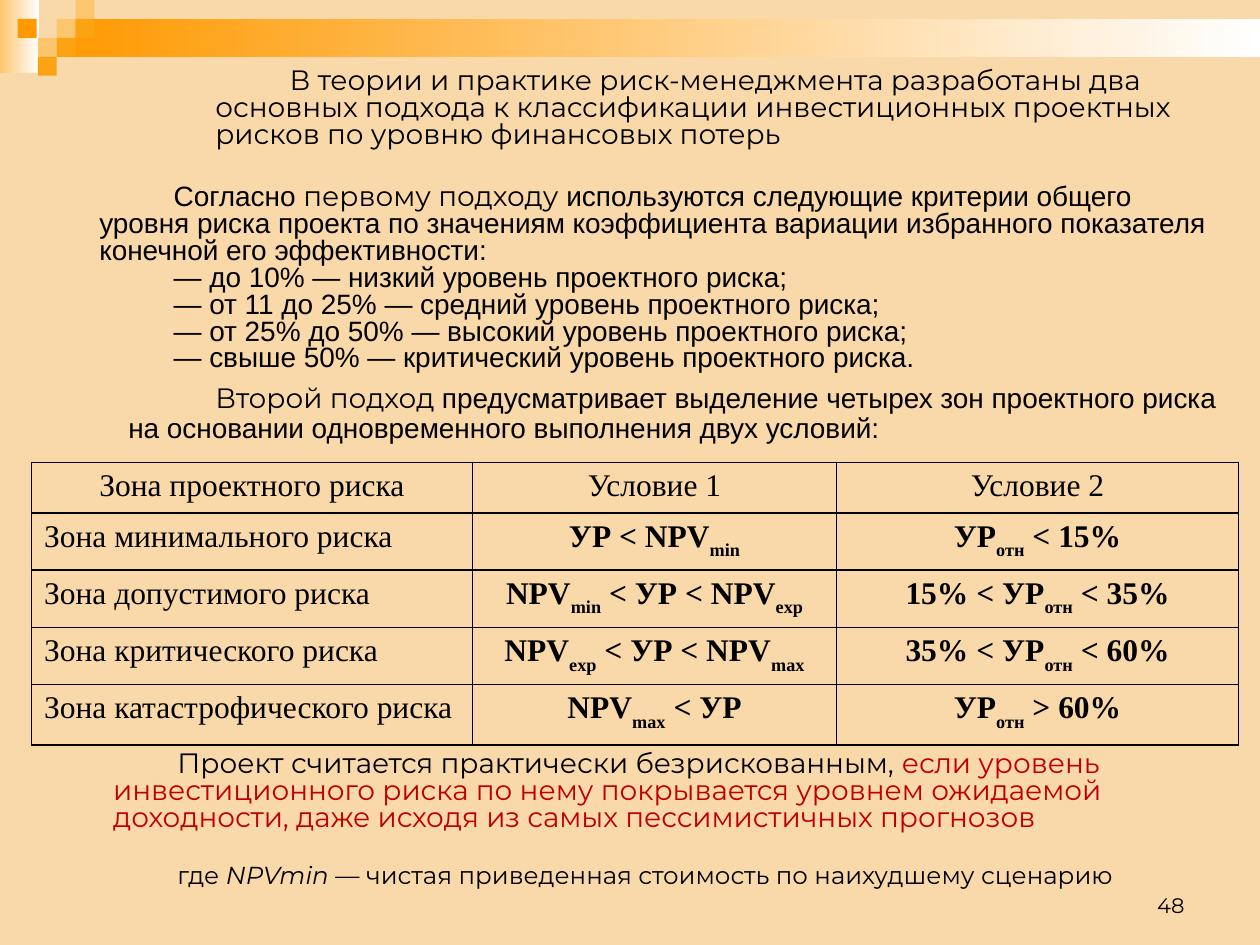
from lxml import etree
from pptx import Presentation
from pptx.dml.color import RGBColor
from pptx.enum.shapes import MSO_SHAPE
from pptx.enum.text import MSO_ANCHOR, PP_ALIGN
from pptx.oxml.ns import qn
from pptx.util import Inches, Pt

RECT = MSO_SHAPE.RECTANGLE
LEFT, MID, RIGHT, JUST = PP_ALIGN.LEFT, PP_ALIGN.CENTER, PP_ALIGN.RIGHT, PP_ALIGN.JUSTIFY
TOP, BOTTOM = MSO_ANCHOR.TOP, MSO_ANCHOR.BOTTOM
SANS, ARIAL, SERIF = "Montserrat", "Arial", "Times New Roman"
BLACK, RED, WHITE = "000000", "C00000", "FFFFFF"
SAND, AMBER, ORANGE, CREAM = "FCC66E", "FBA313", "FF9900", "F9D9A9"

TILES = [
    (0.45, 0.15, SAND), (0.6, 0, SAND), (0.6, 0.15, AMBER), (0.3, 0.3, SAND),
    (0.14, 0.15, ORANGE), (0.45, 0.3, AMBER), (0.3, 0.45, AMBER),
]
INTRO = ("В теории и практике риск-менеджмента разработаны два основных подхода "
         "к классификации инвестиционных проектных рисков по уровню финансовых потерь")
FIRST = (" используются следующие критерии общего уровня риска проекта по значениям "
         "коэффициента вариации избранного показателя конечной его эффективности:")
LEVELS = [
    "— до 10% — низкий уровень проектного риска;",
    "— от 11 до 25% — средний уровень проектного риска;",
    "— от 25% до 50% — высокий уровень проектного риска;",
    "— свыше 50% — критический уровень проектного риска.",
]
SECOND = ("предусматривает выделение четырех зон проектного риска "
          "на основании одновременного выполнения двух условий:")
SAFE = ("если уровень инвестиционного риска по нему покрывается уровнем ожидаемой "
        "доходности, даже исходя из самых пессимистичных прогнозов")
# Every second piece between bars is a subscript.
ZONES = [
    ("Зона проектного риска", "Условие 1", "Условие 2"),
    ("Зона минимального риска", "УР < NPV|min", "УР|отн| < 15%"),
    ("Зона допустимого риска", "NPV|min| < УР < NPV|exp", "15% < УР|отн| < 35%"),
    ("Зона критического риска", "NPV|exp| < УР < NPV|max", "35% < УР|отн| < 60%"),
    ("Зона катастрофического риска", "NPV|max| < УР", "УР|отн| > 60%"),
]
COLS = [3.5, 2.89, 3.19]
ROWS = [0.4, 0.45, 0.45, 0.45, 0.48]


def rgb(code):
    return RGBColor.from_string(code)


def add_run(para, text, font=SANS, size=16, color=BLACK, bold=False, italic=False):
    run = para.add_run()
    run.text = text
    face = run.font
    face.name, face.size, face.bold, face.italic = font, Pt(size), bold, italic
    face.color.rgb = rgb(color)
    return run


def add_text(slide, box, paras, margin=0, indent=0, line=1.0, before=0,
             align=LEFT, anchor=TOP):
    """Each paragraph is a list of (text, run options)."""
    frame = slide.shapes.add_textbox(*map(Inches, box)).text_frame
    frame.word_wrap = True
    frame.vertical_anchor = anchor
    for i, runs in enumerate(paras):
        para = frame.add_paragraph() if i else frame.paragraphs[0]
        para.alignment, para.line_spacing = align, line
        para.space_before = Pt(before)
        props = para._p.get_or_add_pPr()
        props.set("marL", str(Inches(margin)))
        props.set("indent", str(Inches(indent)))
        for text, look in runs:
            add_run(para, text, **look)
    return frame


def add_rect(slide, box, *colors):
    """One colour fills solid, two make a gradient from left to right."""
    rect = slide.shapes.add_shape(RECT, *map(Inches, box))
    rect.shadow.inherit = False
    rect.line.fill.background()
    if len(colors) == 1:
        rect.fill.solid()
        rect.fill.fore_color.rgb = rgb(colors[0])
        return
    rect.fill.gradient()
    rect.fill.gradient_angle = 0
    for stop, color, place in zip(rect.fill.gradient_stops, colors, (0, 1)):
        stop.color.rgb = rgb(color)
        stop.position = place


def add_banner(slide):
    add_rect(slide, (0, 0, 0.31, 0.58), SAND, WHITE)
    add_rect(slide, (0.45, 0.15, 9.55, 0.3), ORANGE, WHITE)
    for x, y, color in TILES:
        add_rect(slide, (x, y, 0.15, 0.15), color)


def set_border(cell):
    props = cell._tc.get_or_add_tcPr()
    for i, side in enumerate(("a:lnL", "a:lnR", "a:lnT", "a:lnB")):
        edge = etree.Element(qn(side), w=str(Pt(1)))
        fill = etree.SubElement(edge, qn("a:solidFill"))
        etree.SubElement(fill, qn("a:srgbClr"), val=BLACK)
        props.insert(i, edge)


def add_zones(slide, box):
    shape = slide.shapes.add_table(len(ROWS), len(COLS), *map(Inches, box))
    table = shape.table
    table.first_row = table.horz_banding = False
    for col, width in zip(table.columns, COLS):
        col.width = Inches(width)
    for row, height in zip(table.rows, ROWS):
        row.height = Inches(height)
    for r, words in enumerate(ZONES):
        for c, text in enumerate(words):
            cell = table.cell(r, c)
            cell.fill.background()
            set_border(cell)
            para = cell.text_frame.paragraphs[0]
            para.alignment = JUST if r and not c else MID
            for i, part in enumerate(text.split("|")):
                run = add_run(para, part, SERIF, 18, bold=bool(r and c))
                if i % 2:
                    run.font._element.set("baseline", "-30000")


def add_approaches(slide):
    arial = {"font": ARIAL}
    add_text(slide, (1.42, 0.5, 8.42, 0.92), [[(INTRO, {})]], 0.19, 0.59, 0.8, 3)
    lead = [("Согласно ", arial), ("первому подходу", {}), (FIRST, arial)]
    add_text(slide, (0.5, 1.42, 9.33, 1.61),
             [lead] + [[(level, arial)] for level in LEVELS], 0.19, 0.59, 0.8)
    add_text(slide, (0.92, 3, 8.92, 1.08),
             [[("Второй подход ", {}), (SECOND, arial)]], 0, 0.69, 0.9, 3)


def add_summary(slide, box):
    small = {"size": 14}
    frame = add_text(slide, box, [
        [("Проект считается практически безрискованным, ", {}), (SAFE, {"color": RED})],
        [("где ", small), ("NPVmin", {"size": 14, "italic": True}),
         (" — чистая приведенная стоимость по наихудшему сценарию", small)],
    ], 0.38, 0.51, 0.8, 3)
    frame.paragraphs[1].space_before = Pt(19)


def main():
    deck = Presentation()
    deck.slide_width, deck.slide_height = Inches(10), Inches(7.5)
    slide = deck.slides.add_slide(deck.slide_layouts[6])
    slide.background.fill.solid()
    slide.background.fill.fore_color.rgb = rgb(CREAM)
    add_banner(slide)
    add_approaches(slide)
    add_zones(slide, (0.25, 3.67, sum(COLS), sum(ROWS)))
    add_summary(slide, (0.42, 5.92, 9.08, 1.22))
    add_text(slide, (7.17, 6.83, 2.33, 0.5), [[("48", {"size": 12})]],
             align=RIGHT, anchor=BOTTOM)
    deck.save("out.pptx")


if __name__ == "__main__":
    main()
